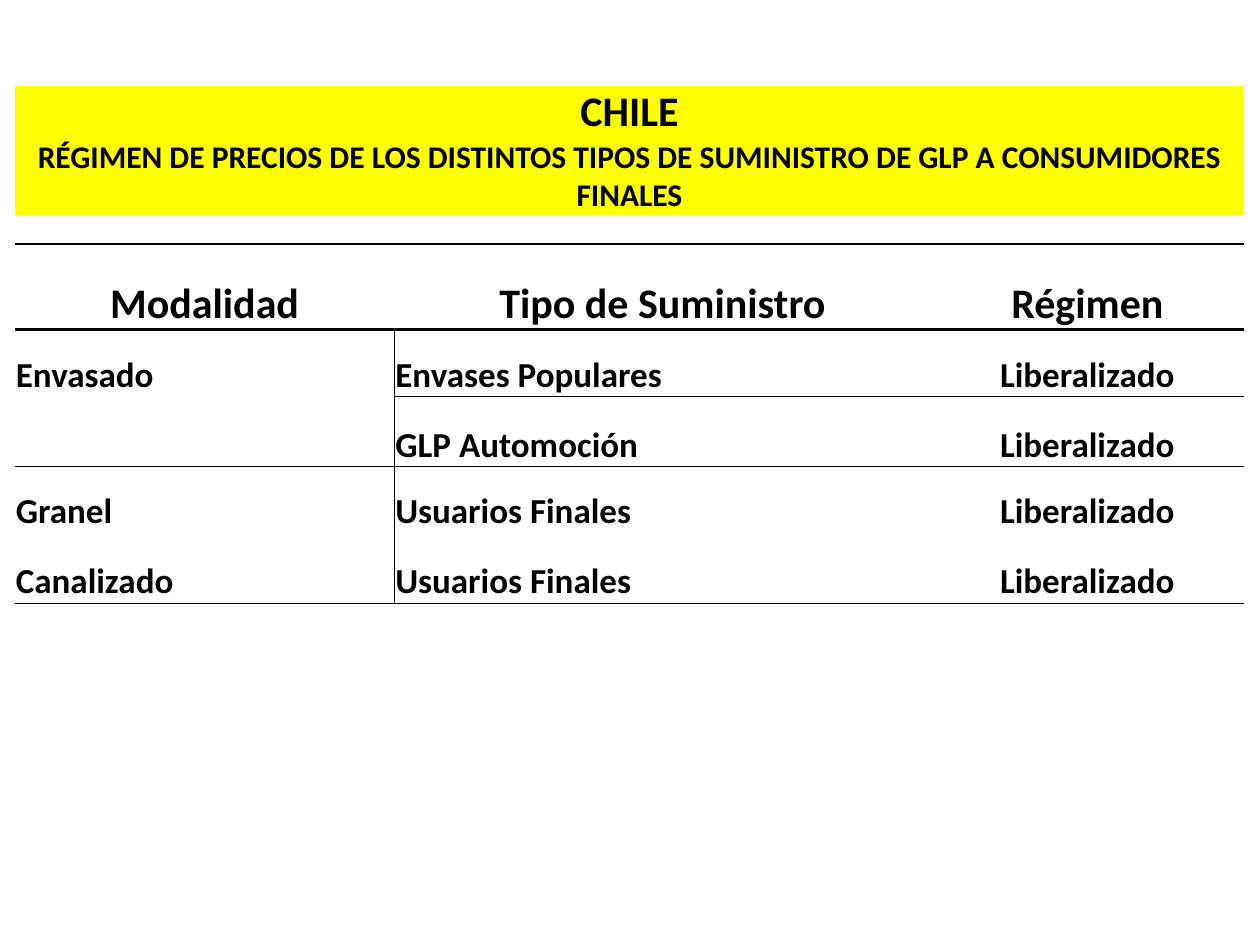
import pptx
import pptx.util
import pptx.dml.color
import pptx.enum.text
import pptx.oxml.ns
import lxml.etree

Cm, Pt = pptx.util.Cm, pptx.util.Pt
ALIGN = pptx.enum.text.PP_ALIGN
BLACK, YELLOW = "000000", "FFFF00"

TITLE = [
    ("CHILE", 24),
    ("RÉGIMEN DE PRECIOS DE LOS DISTINTOS TIPOS DE SUMINISTRO DE GLP A CONSUMIDORES FINALES", 18),
]
HEADER = ["Modalidad", "Tipo de Suministro", "Régimen"]
BODY = [
    ["Envasado", "Envases Populares", "Liberalizado"],
    ["", "GLP Automoción", "Liberalizado"],
    ["Granel", "Usuarios Finales", "Liberalizado"],
    ["Canalizado", "Usuarios Finales", "Liberalizado"],
]
COL_WIDTHS = [7.65, 10.81, 6.32]
ROW_HEIGHTS = [2.6, 0.58, 1.73, 1.35, 1.41, 1.35, 1.41]
HEADER_ROW, BODY_ROW = 2, 3
# Line widths by the row they lie above, and the columns they cross
RULES = {2: (1.5, (0, 1, 2)), 3: (1.5, (0, 1, 2)), 4: (0.5, (1, 2)),
         5: (1, (0, 1, 2)), 7: (1, (0, 1, 2))}
DIVIDER = 0.5
MARGINS = {"margin_left": Cm(0.02), "margin_right": Cm(0.02),
           "margin_top": Cm(0.02), "margin_bottom": 0,
           "vertical_anchor": pptx.enum.text.MSO_ANCHOR.BOTTOM}


def rgb(color):
    return pptx.dml.color.RGBColor.from_string(color)


def rule_width(boundary, col):
    width, cols = RULES.get(boundary, (0, ()))
    return width if col in cols else 0


def draw_borders(cell, widths):
    """Set the four sides in points; 0 leaves a side without a line."""
    tcPr = cell._tc.get_or_add_tcPr()
    qn = pptx.oxml.ns.qn
    for side in "LRTB":
        width = widths[side]
        ln = lxml.etree.SubElement(tcPr, qn(f"a:ln{side}"), w=str(int(Pt(width))))
        if width:
            fill = lxml.etree.SubElement(ln, qn("a:solidFill"))
            lxml.etree.SubElement(fill, qn("a:srgbClr"), val=BLACK)
        else:
            lxml.etree.SubElement(ln, qn("a:noFill"))


def write(cell, lines, align):
    tf = cell.text_frame
    for i, (text, size) in enumerate(lines):
        p = tf.add_paragraph() if i else tf.paragraphs[0]
        p.alignment = align
        font = p.font
        if text:
            r = p.add_run()
            r.text = text
            font = r.font
        for name, value in {"name": "Calibri", "size": Pt(size), "bold": True}.items():
            setattr(font, name, value)
        font.color.rgb = rgb(BLACK)


def cell_lines(row, col):
    if row == 0:
        return TITLE if col == 0 else [("", 10)]
    if row < HEADER_ROW:
        return [("", 10)]
    if row == HEADER_ROW:
        return [(HEADER[col], 24)]
    return [(BODY[row - BODY_ROW][col], 20)]


def main():
    prs = pptx.Presentation()
    prs.slide_width, prs.slide_height = Cm(25.4), Cm(19.05)
    s = prs.slides.add_slide(prs.slide_layouts[6])
    table = s.shapes.add_table(
        len(ROW_HEIGHTS), len(COL_WIDTHS), Cm(0.3), Cm(1.73),
        Cm(sum(COL_WIDTHS)), Cm(sum(ROW_HEIGHTS))).table
    table.first_row = table.horz_banding = False
    for column, width in zip(table.columns, COL_WIDTHS):
        column.width = Cm(width)
    for row, height in zip(table.rows, ROW_HEIGHTS):
        row.height = Cm(height)
    table.cell(0, 0).merge(table.cell(0, len(COL_WIDTHS) - 1))

    for row in range(len(ROW_HEIGHTS)):
        for col in range(len(COL_WIDTHS)):
            cell = table.cell(row, col)
            for name, value in MARGINS.items():
                setattr(cell, name, value)
            in_body = row >= BODY_ROW
            draw_borders(cell, {
                "L": DIVIDER if in_body and col == 1 else 0,
                "R": DIVIDER if in_body and col == 0 else 0,
                "T": rule_width(row, col),
                "B": rule_width(row + 1, col),
            })
            if row == 0:
                cell.fill.solid()
                cell.fill.fore_color.rgb = rgb(YELLOW)
            else:
                cell.fill.background()
            left = in_body and col < 2
            write(cell, cell_lines(row, col), ALIGN.LEFT if left else ALIGN.CENTER)

    prs.save("out.pptx")


if __name__ == "__main__":
    main()
